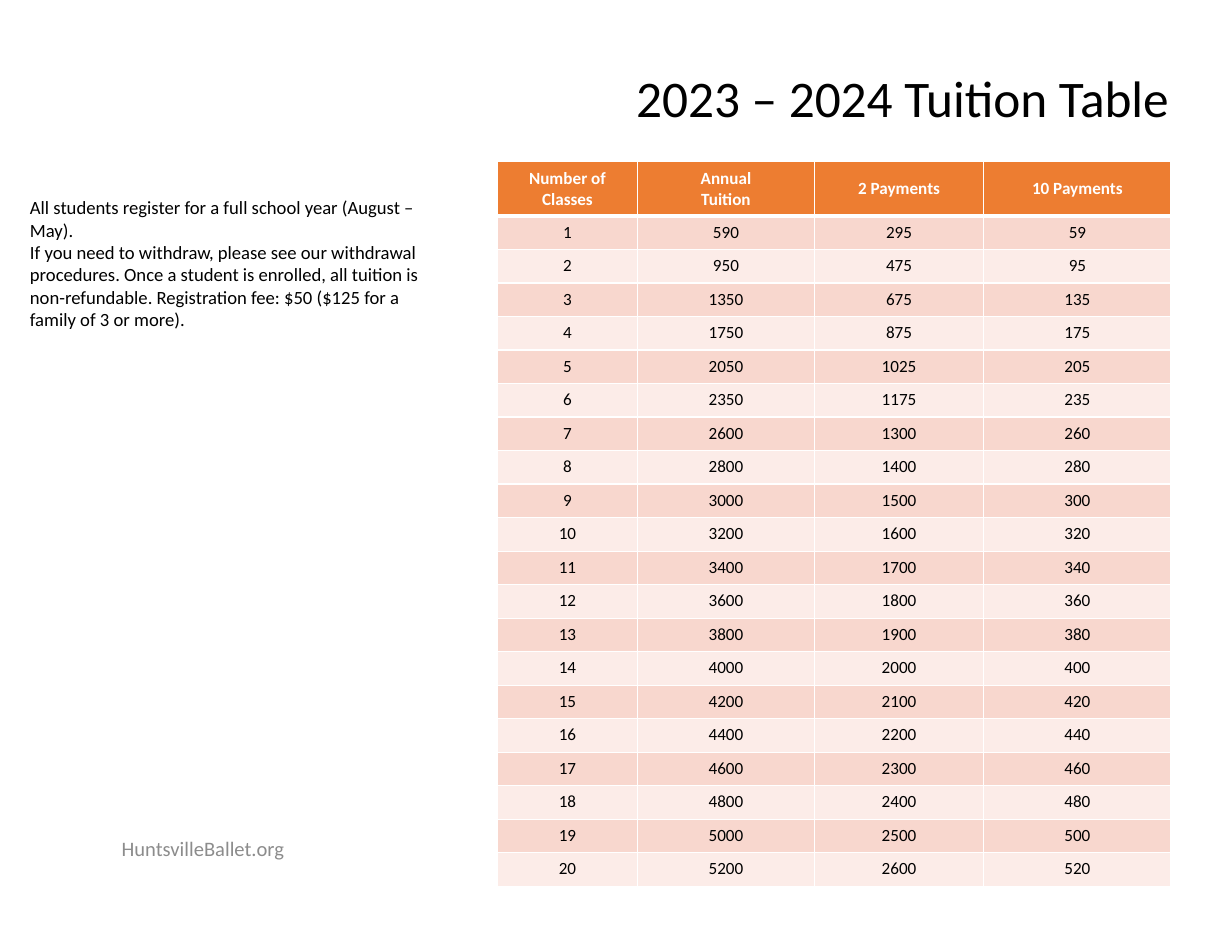
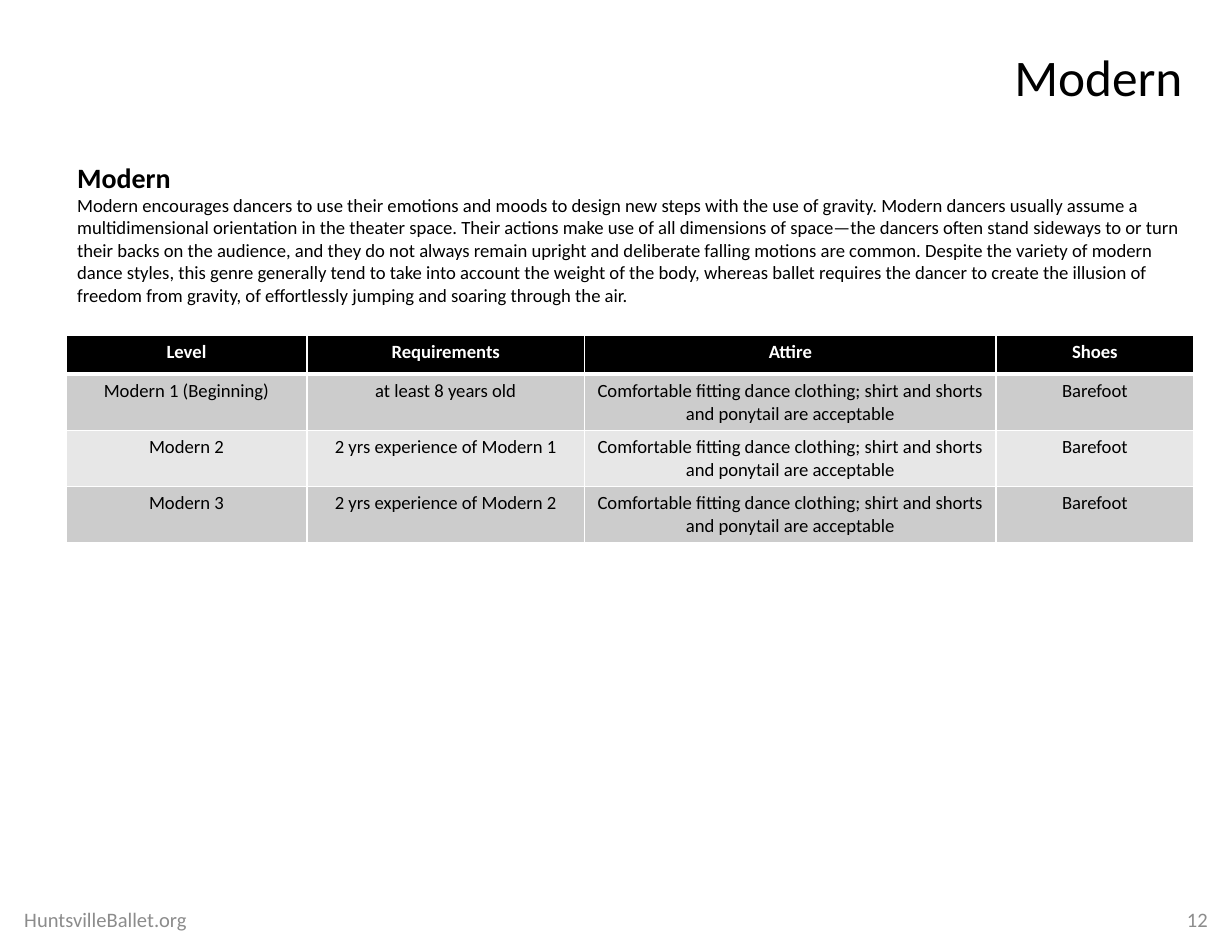
"""Build the tuition table slide and the Modern class slide of a ballet school deck."""
from lxml.etree import SubElement
from pptx import Presentation
from pptx.dml.color import RGBColor
from pptx.enum.text import MSO_ANCHOR, PP_ALIGN
from pptx.oxml.ns import qn
from pptx.util import Cm, Pt

COLORS = {
    "text": "000000",
    "footer": "8C8C8C",
    "white": "FFFFFF",
    "orange": "ED7D31",
    "peach": "F8D7CE",
    "light peach": "FCECE8",
    "black": "000000",
    "gray": "CCCCCC",
    "light gray": "E7E7E7",
}
FONT = "Calibri"


def add_text(slide, box, lines, size, color="text", align=PP_ALIGN.LEFT, anchor=MSO_ANCHOR.MIDDLE):
    text_frame = slide.shapes.add_textbox(*[Cm(length) for length in box]).text_frame
    text_frame.word_wrap = True
    text_frame.vertical_anchor = anchor
    text_frame.text = "\n".join(lines)
    for paragraph in text_frame.paragraphs:
        paragraph.alignment = align
        for run in paragraph.runs:
            run.font.name = FONT
            run.font.size = Pt(size)
            run.font.color.rgb = RGBColor.from_string(COLORS[color])
    return text_frame


def add_table(slide, left, top, widths, heights, rows, size, fills, header_anchor):
    table = slide.shapes.add_table(
        len(rows), len(widths), Cm(left), Cm(top), Cm(sum(widths)), Cm(sum(heights))
    ).table
    for column, width in zip(table.columns, widths):
        column.width = Cm(width)
    for row_index, (row, height) in enumerate(zip(rows, heights)):
        table.rows[row_index].height = Cm(height)
        is_header = row_index == 0
        fill = fills[0] if is_header else fills[2 - row_index % 2]
        if not is_header:
            fill = fills[1] if row_index % 2 else fills[2]
        edges = {"lnL": 1, "lnR": 1, "lnT": 3 if row_index == 1 else 1, "lnB": 3 if is_header else 1}
        for column_index, value in enumerate(row):
            cell = table.cell(row_index, column_index)
            properties = cell._tc.get_or_add_tcPr()
            for edge, points in edges.items():
                line = SubElement(properties, qn(f"a:{edge}"), w=str(Pt(points)))
                SubElement(SubElement(line, qn("a:solidFill")), qn("a:srgbClr"), val=COLORS["white"])
            cell.fill.solid()
            cell.fill.fore_color.rgb = RGBColor.from_string(COLORS[fill])
            cell.vertical_anchor = header_anchor if is_header else MSO_ANCHOR.TOP
            cell.text_frame.text = str(value)
            for paragraph in cell.text_frame.paragraphs:
                paragraph.alignment = PP_ALIGN.CENTER
                for run in paragraph.runs:
                    run.font.name = FONT
                    run.font.size = Pt(size)
                    run.font.bold = is_header
                    run.font.color.rgb = RGBColor.from_string(COLORS["white" if is_header else "text"])


presentation = Presentation()
presentation.slide_width = Cm(27.94)
presentation.slide_height = Cm(21.59)

pages = [
    ("2023 – 2024 Tuition Table", (11.07, 0.91, 15.7, 2.74), (2.51, 18.72, 8.59, 1.02)),
    ("Modern", (12.57, 0.66, 14.5, 2.31), (0.3, 20.27, 9.42, 1.14)),
]
slides = []
for title, title_box, footer_box in pages:
    slide = presentation.slides.add_slide(presentation.slide_layouts[6])
    title_frame = add_text(slide, title_box, [title], 33, align=PP_ALIGN.RIGHT)
    title_frame.paragraphs[0].line_spacing = 0.9
    add_text(slide, footer_box, ["HuntsvilleBallet.org"], 13.2, "footer")
    slides.append(slide)
tuition_slide, modern_slide = slides

policy = [
    "All students register for a full school year (August – May).",
    "If you need to withdraw, please see our withdrawal procedures. Once a student is enrolled, "
    "all tuition is non-refundable. Registration fee: $50 ($125 for a family of 3 or more).",
]
add_text(tuition_slide, (0.43, 4.32, 9.37, 3.33), policy, 12, anchor=MSO_ANCHOR.TOP)

annual_tuition = [590, 950, 1350, 1750, 2050, 2350, *range(2600, 5201, 200)]
tuition_rows = [("Number of Classes", "Annual\nTuition", "2 Payments", "10 Payments")]
for class_count, annual in enumerate(annual_tuition, start=1):
    tuition_rows.append((class_count, annual, annual // 2, annual // 10))
add_table(
    tuition_slide, 11.28, 3.66, [3.18, 4.01, 3.84, 4.25], [1.24] + [0.76] * len(annual_tuition),
    tuition_rows, 11, ["orange", "peach", "light peach"], MSO_ANCHOR.MIDDLE,
)

description = [
    "Modern",
    "Modern encourages dancers to use their emotions and moods to design new steps with the use of "
    "gravity. Modern dancers usually assume a multidimensional orientation in the theater space. "
    "Their actions make use of all dimensions of space—the dancers often stand sideways to or turn "
    "their backs on the audience, and they do not always remain upright and deliberate falling "
    "motions are common. Despite the variety of modern dance styles, this genre generally tend to "
    "take into account the weight of the body, whereas ballet requires the dancer to create the "
    "illusion of freedom from gravity, of effortlessly jumping and soaring through the air.",
]
description_frame = add_text(modern_slide, (1.5, 3.51, 25.58, 3.58), description, 12, anchor=MSO_ANCHOR.TOP)
heading_font = description_frame.paragraphs[0].runs[0].font
heading_font.size = Pt(18)
heading_font.bold = True

attire = "Comfortable fitting dance clothing; shirt and shorts and ponytail are acceptable"
levels = [
    ("Modern 1 (Beginning)", "at least 8 years old"),
    ("Modern 2", "2 yrs experience of Modern 1"),
    ("Modern 3", "2 yrs experience of Modern 2"),
]
modern_rows = [("Level", "Requirements", "Attire", "Shoes")]
for level, requirement in levels:
    modern_rows.append((level, requirement, attire, "Barefoot"))
add_table(
    modern_slide, 1.5, 7.6, [5.46, 6.3, 9.33, 4.48], [0.89] + [1.27] * len(levels),
    modern_rows, 12, ["black", "gray", "light gray"], MSO_ANCHOR.TOP,
)
add_text(modern_slide, (21.34, 20.27, 6.3, 1.14), ["12"], 13.2, "footer", PP_ALIGN.RIGHT)

presentation.save("out.pptx")
